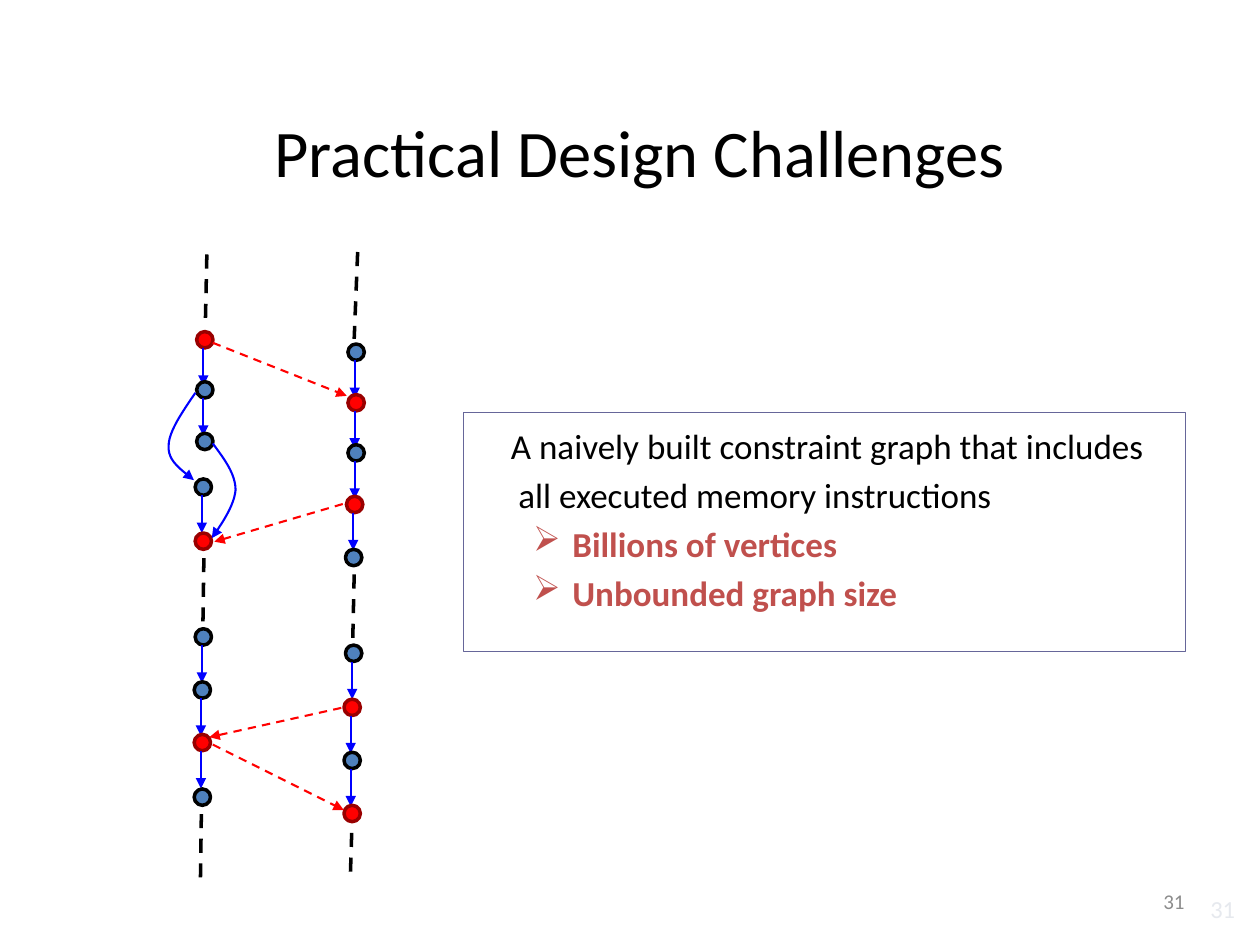
from dataclasses import dataclass
from itertools import chain
from typing import NamedTuple

from lxml import etree
from pptx import Presentation
from pptx import util as u
from pptx.dml.color import RGBColor
from pptx.enum import dml, shapes, text
from pptx.oxml.ns import qn


@dataclass(frozen=True)
class Theme:
    font: str = "Calibri"
    black: str = "000000"
    red: str = "FF0000"
    maroon: str = "990000"
    steel: str = "4F81BD"
    blue: str = "0000FF"
    border: str = "666699"
    accent: str = "C0504D"
    grey: str = "8C8C8C"
    pale: str = "E6E9EE"
    title: float = 38
    body: float = 20
    number: float = 12
    corner: float = 14
    thin: float = 0.75
    edge: float = 1.2
    thick: float = 2


class Node(NamedTuple):
    x: float
    y: float
    hot: bool = False    # red vertex
    next: bool = False   # arrow down to the following vertex


class Edge(NamedTuple):
    x1: float
    y1: float
    x2: float
    y2: float


class Curve(NamedTuple):
    """A start point and the cubic bends that follow it."""
    start: tuple
    bends: list


THEME = Theme()
SIZE = 0.33   # vertex diameter, cm
STEP = 0.76   # length of a downward arrow, cm

LEFT = [
    Node(4.13, 6.85, hot=True, next=True), Node(4.13, 7.86, next=True),
    Node(4.13, 8.9), Node(4.1, 9.82, next=True), Node(4.1, 10.91, hot=True),
    Node(4.1, 12.84, next=True), Node(4.08, 13.91, next=True),
    Node(4.08, 14.97, hot=True, next=True), Node(4.08, 16.07),
]
RIGHT = [
    Node(7.18, 7.1, next=True), Node(7.18, 8.12, hot=True, next=True),
    Node(7.18, 9.13, next=True), Node(7.15, 10.17, hot=True, next=True),
    Node(7.13, 11.24), Node(7.13, 13.17, next=True),
    Node(7.1, 14.26, hot=True, next=True), Node(7.1, 15.33, next=True),
    Node(7.1, 16.4, hot=True),
]
GAPS = [
    Edge(4.17, 5.13, 4.14, 6.5), Edge(4.11, 11.25, 4.09, 12.62),
    Edge(4.06, 16.41, 4.04, 17.78), Edge(7.21, 5.08, 7.14, 6.83),
    Edge(7.14, 11.58, 7.11, 12.95), Edge(7.09, 16.79, 7.06, 17.75),
]
CROSS = [
    Edge(4.29, 6.91, 6.99, 7.98), Edge(6.91, 10.16, 4.32, 10.92),
    Edge(6.88, 14.27, 4.22, 14.86), Edge(4.29, 15.01, 6.93, 16.33),
]
CURVES = [
    Curve((3.94, 7.92), [((3.66, 8.33), (3.4, 8.71), (3.4, 8.99)),
                         ((3.38, 9.3), (3.66, 9.47), (3.91, 9.68))]),
    Curve((4.29, 8.94), [((4.52, 9.25), (4.75, 9.55), (4.75, 9.88)),
                         ((4.72, 10.19), (4.5, 10.52), (4.27, 10.85))]),
]


def tint(code: str) -> RGBColor:
    return RGBColor.from_string(code)


def stroke(line, color: str, width: float, dash=False, arrow=False) -> None:
    line.color.rgb = tint(color)
    line.width = u.Pt(width)
    if dash:
        line.dash_style = dml.MSO_LINE.DASH
    if arrow:
        ln = line._get_or_add_ln()
        etree.SubElement(ln, qn("a:tailEnd"), type="triangle")


def link(slide, edge: Edge, color: str, width: float, **look) -> None:
    wire = slide.shapes.add_connector(
        shapes.MSO_CONNECTOR.STRAIGHT, *map(u.Cm, edge))
    stroke(wire.line, color, width, **look)
    etree.SubElement(wire._element.spPr, qn("a:effectLst"))


def thread(slide, nodes: list[Node]) -> None:
    """Draw one column of vertices and the arrows between them."""
    for node in nodes:
        dot = slide.shapes.add_shape(
            shapes.MSO_SHAPE.OVAL, u.Cm(node.x - SIZE / 2),
            u.Cm(node.y - SIZE / 2), u.Cm(SIZE), u.Cm(SIZE))
        dot.shadow.inherit = False
        dot.fill.solid()
        dot.fill.fore_color.rgb = tint(THEME.red if node.hot else THEME.steel)
        stroke(dot.line, THEME.maroon if node.hot else THEME.black, THEME.thick)
        if node.next:
            x, y = node.x - 0.03, node.y + SIZE / 2
            link(slide, Edge(x, y, x, y + STEP), THEME.blue, THEME.edge,
                 arrow=True)


def trace(a, b, c, d, steps: int = 12) -> list[tuple]:
    """Points along a cubic curve, without its start."""
    ts = [i / steps for i in range(1, steps + 1)]
    return [tuple(u.Cm((1 - t) ** 3 * p + 3 * t * (1 - t) ** 2 * q
                       + 3 * t * t * (1 - t) * r + t ** 3 * s)
                  for p, q, r, s in zip(a, b, c, d)) for t in ts]


def arc(slide, curve: Curve) -> None:
    starts = [curve.start] + [bend[-1] for bend in curve.bends]
    points = chain.from_iterable(
        trace(a, *bend) for a, bend in zip(starts, curve.bends))
    pen = slide.shapes.build_freeform(*map(u.Cm, curve.start))
    pen.add_line_segments(list(points), close=False)
    shape = pen.convert_to_shape()
    shape.shadow.inherit = False
    shape.fill.background()
    stroke(shape.line, THEME.blue, THEME.edge, arrow=True)


def write(para, words: str, *, size: float, color: str = THEME.black,
          bold=False, align=text.PP_ALIGN.LEFT, left=0.0, first=0.0,
          before=0.0, lead=None, mark="") -> None:
    run = para.add_run()
    run.text = words
    font = run.font
    font.name, font.size, font.bold = THEME.font, u.Pt(size), bold
    font.color.rgb = tint(color)
    para.alignment = align
    para.space_before = u.Pt(before)
    if lead:
        para.line_spacing = lead
    props = para._p.get_or_add_pPr()
    props.set("marL", str(u.Cm(left)))
    props.set("indent", str(u.Cm(first)))
    if mark:
        etree.SubElement(props, qn("a:buChar"), char=mark)


def label(slide, box: tuple, words: str, **look) -> None:
    frame = slide.shapes.add_textbox(*map(u.Cm, box)).text_frame
    frame.word_wrap = True
    frame.vertical_anchor = text.MSO_ANCHOR.MIDDLE
    write(frame.paragraphs[0], words, **look)


def panel(slide) -> None:
    box = slide.shapes.add_shape(
        shapes.MSO_SHAPE.RECTANGLE, *map(u.Cm, (9.35, 8.31, 14.55, 4.83)))
    box.shadow.inherit = False
    box.fill.background()
    stroke(box.line, THEME.border, THEME.thin)
    frame = box.text_frame
    frame.word_wrap = True
    frame.vertical_anchor = text.MSO_ANCHOR.TOP
    frame.margin_left = frame.margin_top = frame.margin_bottom = u.Cm(0.13)
    frame.margin_right = u.Cm(0.25)
    write(frame.paragraphs[0],
          "A naively built constraint graph that includes "
          "all executed memory instructions",
          size=THEME.body, left=0.97, first=-0.15, before=4, lead=1.15)
    for words in ("Billions of vertices", "Unbounded graph size"):
        write(frame.add_paragraph(), words, size=THEME.body, bold=True,
              color=THEME.accent, left=2.06, first=-0.79, before=4, mark="➢")


def main() -> None:
    deck = Presentation()
    deck.slide_width, deck.slide_height = u.Cm(25.4), u.Cm(19.05)
    slide = deck.slides.add_slide(deck.slide_layouts[6])
    label(slide, (1.47, 2.11, 22.86, 1.88), "Practical Design Challenges",
          size=THEME.title, align=text.PP_ALIGN.CENTER)
    for nodes in (LEFT, RIGHT):
        thread(slide, nodes)
    for gap in GAPS:
        link(slide, gap, THEME.black, THEME.thick, dash=True)
    for curve in CURVES:
        arc(slide, curve)
    for edge in CROSS:
        link(slide, edge, THEME.red, THEME.edge, dash=True, arrow=True)
    panel(slide)
    label(slide, (18.21, 17.65, 5.92, 1.02), "31", size=THEME.number,
          color=THEME.grey, align=text.PP_ALIGN.RIGHT)
    label(slide, (23.2, 17.8, 1.95, 1.02), "31", size=THEME.corner,
          color=THEME.pale, align=text.PP_ALIGN.RIGHT)
    deck.save("out.pptx")


if __name__ == "__main__":
    main()
